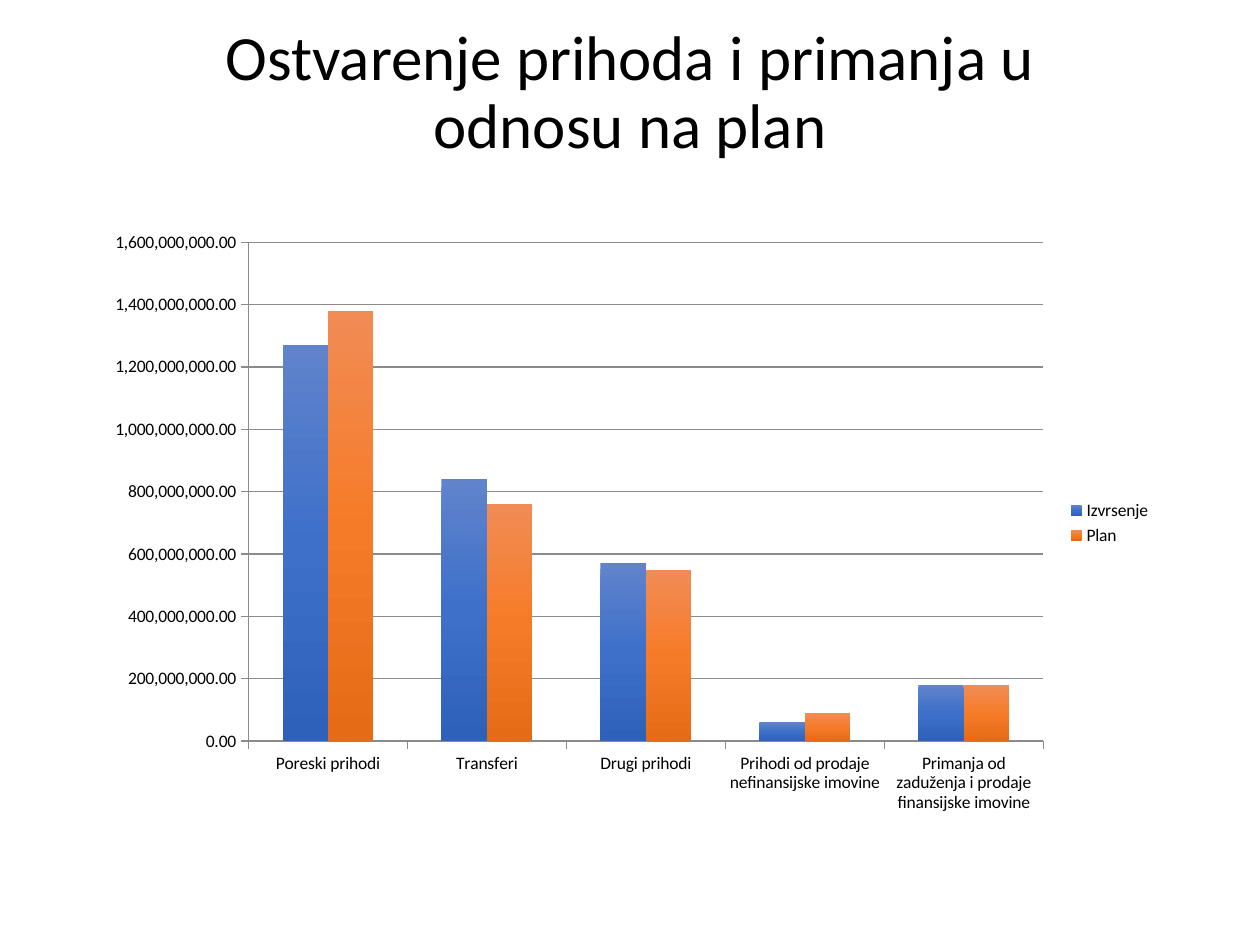
from copy import deepcopy

from lxml import etree
from pptx import Presentation
from pptx.chart.data import CategoryChartData
from pptx.dml.color import RGBColor
from pptx.enum import chart as ch, text
from pptx.util import Inches, Pt

COLORS = {
    "text": "000000",
    "line": "8B8B8B",
    "Izvrsenje": ("6083CB", "3E70CA", "2E61BA"),
    "Plan": ("F18C55", "F67B28", "E56B17"),
}


def rgb(code):
    return RGBColor.from_string(code)


deck = Presentation()
deck.slide_width, deck.slide_height = Inches(10), Inches(7.5)
slide = deck.slides.add_slide(deck.slide_layouts[5])

# Title
title = slide.shapes.title
title.left, title.top = Inches(1.25), Inches(1.17)
title.width, title.height = Inches(7.5), Inches(0.17)
frame = title.text_frame
frame.text = "Ostvarenje prihoda i primanja u odnosu na plan"
frame.word_wrap = True
frame.auto_size = text.MSO_AUTO_SIZE.NONE
frame.vertical_anchor = text.MSO_ANCHOR.BOTTOM
para = frame.paragraphs[0]
para.alignment = text.PP_ALIGN.CENTER
para.line_spacing = 0.9
para.font.size = Pt(36)
para.font.name = "Calibri"
para.font.color.rgb = rgb(COLORS["text"])

# Chart data, in millions
data = CategoryChartData(number_format="#,##0.00")
data.categories = [
    "Poreski prihodi",
    "Transferi",
    "Drugi prihodi",
    "Prihodi od prodaje nefinansijske imovine",
    "Primanja od zaduženja i prodaje finansijske imovine",
]
sums = {"Izvrsenje": (1270, 840, 570, 60, 180), "Plan": (1380, 760, 550, 90, 180)}
for name, vals in sums.items():
    data.add_series(name, [val * 1_000_000 for val in vals])

# Chart
chart = slide.shapes.add_chart(
    ch.XL_CHART_TYPE.COLUMN_CLUSTERED,
    Inches(0.75), Inches(1.75), Inches(8.49), Inches(4.8), data,
).chart
chart.has_title = False
chart.font.name = "Calibri"
chart.font.size = Pt(10)
chart.font.color.rgb = rgb(COLORS["text"])
chart.has_legend = True
chart.legend.position = ch.XL_LEGEND_POSITION.RIGHT
chart.legend.include_in_layout = False

# Axes and grid
rows = chart.value_axis
rows.minimum_scale, rows.maximum_scale = 0, 1_600_000_000
rows.major_unit = 200_000_000
rows.has_major_gridlines = True
rows.tick_labels.number_format = "#,##0.00"
rows.tick_labels.number_format_is_linked = False
for axis in (rows, chart.category_axis):
    axis.major_tick_mark = ch.XL_TICK_MARK.OUTSIDE
for part in (rows, chart.category_axis, rows.major_gridlines):
    part.format.line.color.rgb = rgb(COLORS["line"])
    part.format.line.width = Pt(0.75)

# Bars shaded from top to bottom
plot = chart.plots[0]
plot.gap_width = 150
plot.overlap = 0
plot.vary_by_categories = False
for bars in plot.series:
    bars.invert_if_negative = False
    fill = bars.format.fill
    fill.gradient()
    fill.gradient_angle = 270
    stops = bars._element.xpath(".//a:gsLst")[0]
    stops.insert(1, deepcopy(stops[0]))
    for stop, pos, code in zip(fill.gradient_stops, (0, 0.5, 1), COLORS[bars.name]):
        stop.position = pos
        stop.color.rgb = rgb(code)

# Fixed plot area
area = chart._chartSpace.xpath(".//c:plotArea")[0]
for old in area.xpath("c:layout"):
    area.remove(old)
space = "{http://schemas.openxmlformats.org/drawingml/2006/chart}"
layout = etree.Element(space + "layout")
area.insert(0, layout)
manual = etree.SubElement(layout, space + "manualLayout")
for tag, val in (("layoutTarget", "inner"), ("xMode", "edge"), ("yMode", "edge"),
                 ("x", "0.144"), ("y", "0.036"), ("w", "0.743"), ("h", "0.825")):
    etree.SubElement(manual, space + tag, val=val)

deck.save("out.pptx")
